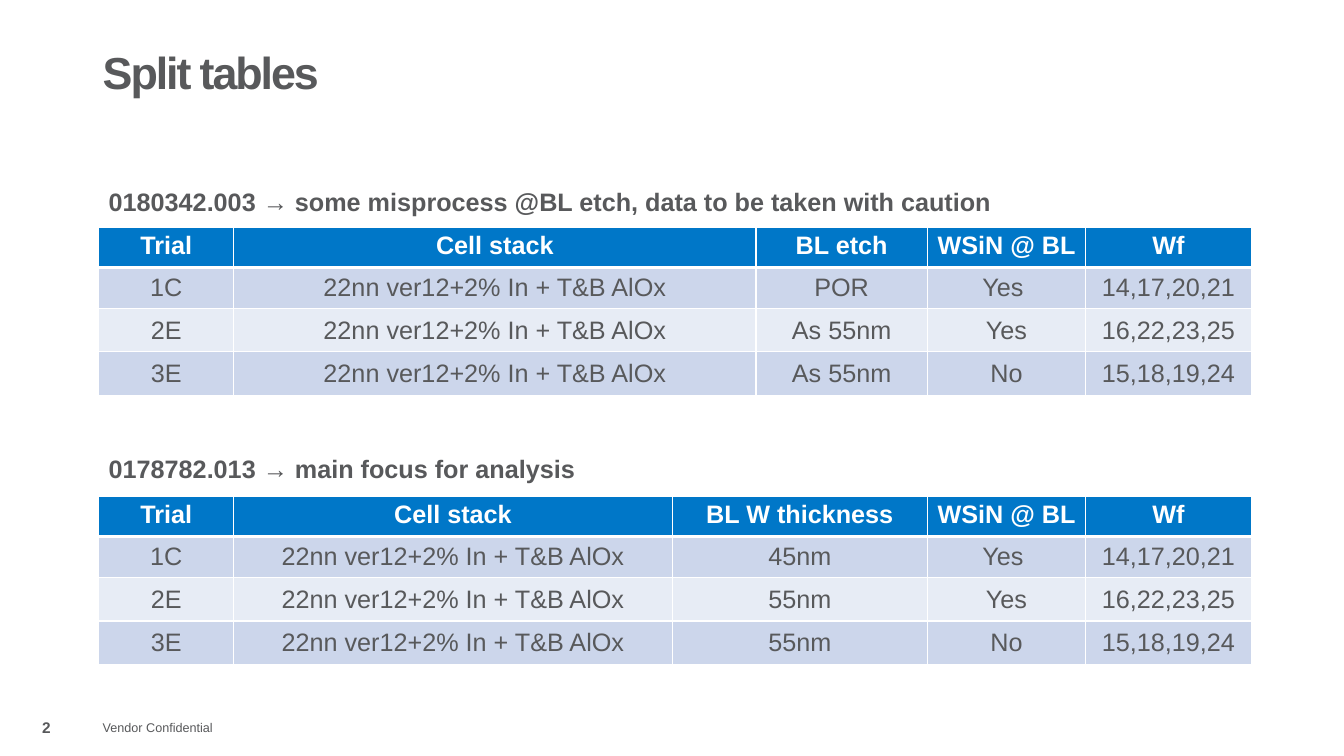
"""Build the slide with two split tables."""
import pptx
import pptx.dml.color
import pptx.enum.text
import pptx.oxml.ns
import pptx.util
from lxml import etree

Cm = pptx.util.Cm
Pt = pptx.util.Pt
RGB = pptx.dml.color.RGBColor
ALIGN = pptx.enum.text.PP_ALIGN
ANCHOR = pptx.enum.text.MSO_ANCHOR
FIT = pptx.enum.text.MSO_AUTO_SIZE
qn = pptx.oxml.ns.qn

GREY = RGB(0x58, 0x59, 0x5B)
WHITE = RGB(0xFF, 0xFF, 0xFF)
BLUE = RGB(0x00, 0x77, 0xC8)
DARK = RGB(0xCC, 0xD6, 0xEB)
LIGHT = RGB(0xE7, 0xEC, 0xF5)

LEFT = 2.34
INDENT = 2.49
FOOT = 17.81
ROWS = (0.98, 1.04, 1.09, 1.09)
STACK = "22nn ver12+2% In + T&B AlOx"
TRIALS = ("1C", "2E", "3E")
YES_NO = ("Yes ", "Yes", "No")
WAFERS = ("14,17,20,21", "16,22,23,25", "15,18,19,24")


def apply(item, form):
    """Set each attribute of an item from a dict of values."""
    for name, value in form.items():
        setattr(item, name, value)


def style(para, size, color, bold, align=ALIGN.LEFT):
    """Format a paragraph and its font."""
    para.alignment = align
    apply(para.font, {"name": "Arial", "size": Pt(size), "bold": bold})
    para.font.color.rgb = color


def label(slide, text, box, size, bold=True, align=ALIGN.LEFT, **form):
    """Add a text box and return its paragraph."""
    frame = slide.shapes.add_textbox(*map(Cm, box)).text_frame
    apply(frame, {"word_wrap": True, "vertical_anchor": ANCHOR.MIDDLE, **form})
    para = frame.paragraphs[0]
    para.text = text
    style(para, size, GREY, bold, align)
    return para


def border(cell, row):
    """Draw white cell borders, thicker under the header row."""
    widths = {"L": 1, "R": 1, "T": 3 if row == 1 else 1, "B": 3 if row == 0 else 1}
    props = cell._tc.get_or_add_tcPr()
    for side, width in widths.items():
        line = etree.SubElement(props, qn(f"a:ln{side}"), w=str(Pt(width)))
        fill = etree.SubElement(line, qn("a:solidFill"))
        etree.SubElement(fill, qn("a:srgbClr"), val=str(WHITE))


def paint(cell, text, row):
    """Fill in one table cell."""
    head = row == 0
    apply(cell, {
        "text": text,
        "margin_left": Cm(0.1),
        "margin_right": Cm(0.1),
        "vertical_anchor": ANCHOR.TOP if head else ANCHOR.MIDDLE,
    })
    style(cell.text_frame.paragraphs[0], 18, WHITE if head else GREY, head, ALIGN.CENTER)
    border(cell, row)
    cell.fill.solid()
    cell.fill.fore_color.rgb = BLUE if head else (LIGHT, DARK)[row % 2]


def grid(slide, top, widths, title, values):
    """Add a split table whose third column varies."""
    data = [("Trial", "Cell stack", title, "WSiN @ BL", "Wf")]
    data += [(trial, STACK, value, flag, wafer)
             for trial, value, flag, wafer in zip(TRIALS, values, YES_NO, WAFERS)]
    box = (INDENT, top, sum(widths), sum(ROWS))
    table = slide.shapes.add_table(len(data), len(widths), *map(Cm, box)).table
    for column, width in zip(table.columns, widths):
        column.width = Cm(width)
    for row, (texts, height) in enumerate(zip(data, ROWS)):
        table.rows[row].height = Cm(height)
        for col, text in enumerate(texts):
            paint(table.cell(row, col), text, row)


def split(slide, top, text, width, *table):
    """Add a caption and the table under it."""
    label(slide, text, (INDENT, top, width, 1.02), 18, word_wrap=False,
          vertical_anchor=ANCHOR.TOP, auto_size=FIT.SHAPE_TO_FIT_TEXT)
    grid(slide, *table)


def main():
    """Build and save the deck."""
    deck = pptx.Presentation()
    apply(deck, {"slide_width": Cm(33.87), "slide_height": Cm(19.05)})
    slide = deck.slides.add_slide(deck.slide_layouts[6])

    title = label(slide, "Split tables", (LEFT, 1.02, 29.21, 1.75), 32)
    title.line_spacing = 0.9
    title.runs[0]._r.get_or_add_rPr().set("spc", "-150")

    label(slide, "Vendor Confidential", (LEFT, FOOT, 3.86, 1.02), 9, False)
    label(slide, "2", (0, FOOT, LEFT, 1.02), 11, align=ALIGN.CENTER)

    split(slide, 4.57,
          "0180342.003 → some misprocess @BL etch, data to be taken with caution",
          22.94, 5.72, (3.4, 13.16, 4.32, 3.99, 4.17),
          "BL etch", ("POR", "As 55nm", "As 55nm"))
    split(slide, 11.3, "0178782.013 → main focus for analysis",
          12.37, 12.5, (3.4, 11.05, 6.43, 3.99, 4.17),
          "BL W thickness", ("45nm", "55nm", "55nm"))
    deck.save("out.pptx")


if __name__ == "__main__":
    main()
